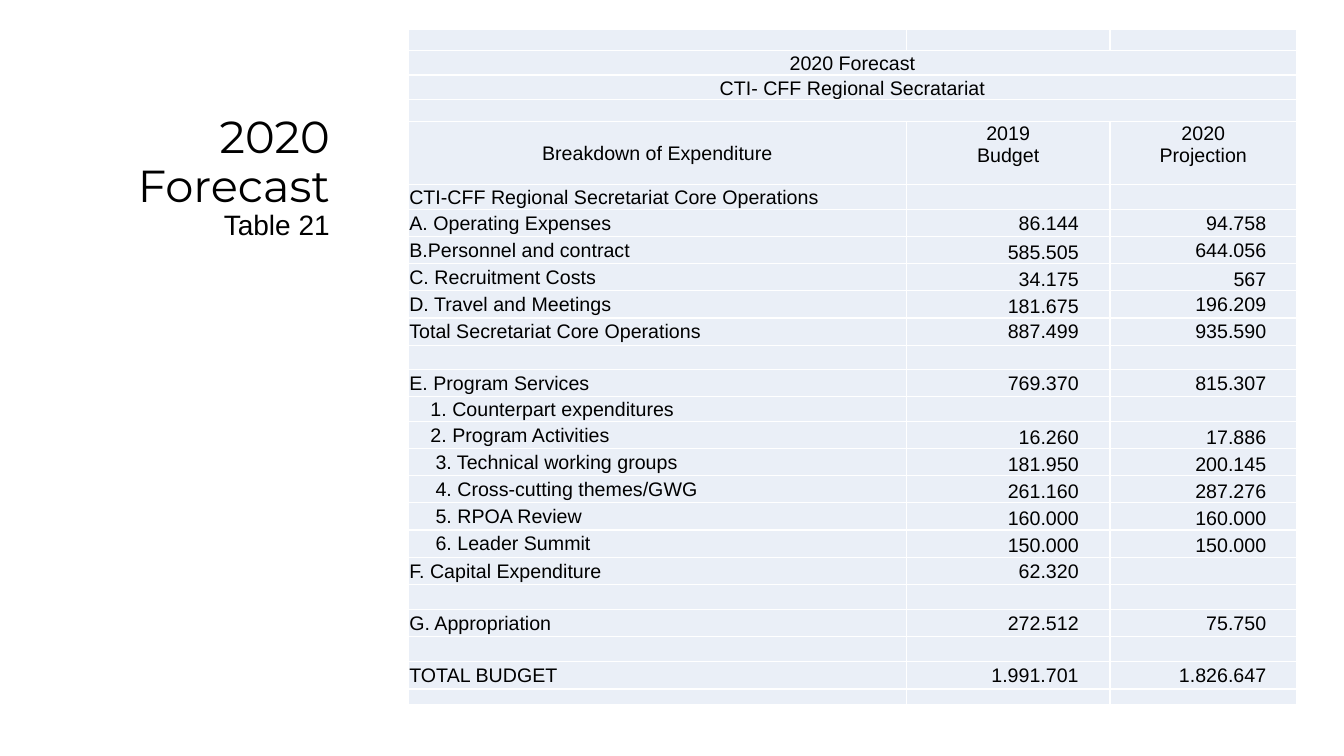
from lxml import etree
from pptx import Presentation
from pptx.dml.color import RGBColor
from pptx.enum.text import MSO_ANCHOR, PP_ALIGN
from pptx.oxml.ns import qn
from pptx.util import Inches, Pt

LEFT, CENTER, RIGHT = PP_ALIGN.LEFT, PP_ALIGN.CENTER, PP_ALIGN.RIGHT
TOP, MIDDLE, BOTTOM = MSO_ANCHOR.TOP, MSO_ANCHOR.MIDDLE, MSO_ANCHOR.BOTTOM

COLORS = {"text": "000000", "cell": "EAEFF7", "border": "FFFFFF"}
COLUMN_WIDTHS = (4.94, 2.02, 1.85)
AMOUNT_MARGINS = (0.31, 0.3)
EMPTY = ("", "", "")

# Each banner: row height, text across all columns
BANNERS = [
    (0.22, "2020 Forecast"),
    (0.22, "CTI- CFF Regional Secratariat"),
    (0.22, ""),
]
HEADER_HEIGHT = 0.62
HEADER = (
    ("Breakdown of Expenditure", MIDDLE),
    ("2019\vBudget", TOP),
    ("2020\vProjection", TOP),
)
# Each row: height, label indent, (label, 2019, 2020), anchors of the two amounts
EXPENDITURE = [
    (0.25, 0, ("CTI-CFF Regional Secretariat Core Operations", "", ""), (MIDDLE, MIDDLE)),
    (0.27, 0, ("A. Operating Expenses", "86.144", "94.758"), (MIDDLE, MIDDLE)),
    (0.27, 0, ("B.Personnel and contract", "585.505", "644.056"), (BOTTOM, MIDDLE)),
    (0.27, 0, ("C. Recruitment Costs", "34.175", "567"), (BOTTOM, BOTTOM)),
    (0.27, 0, ("D. Travel and Meetings", "181.675", "196.209"), (BOTTOM, MIDDLE)),
    (0.27, 0, ("Total Secretariat Core Operations", "887.499", "935.590"), (MIDDLE, MIDDLE)),
    (0.24, 0, EMPTY, (MIDDLE, MIDDLE)),
    (0.27, 0, ("E. Program Services", "769.370", "815.307"), (MIDDLE, MIDDLE)),
    (0.23, 0.21, ("1. Counterpart expenditures", "", ""), (MIDDLE, MIDDLE)),
    (0.27, 0.21, ("2. Program Activities", "16.260", "17.886"), (BOTTOM, BOTTOM)),
    (0.27, 0.26, ("3. Technical working groups", "181.950", "200.145"), (BOTTOM, BOTTOM)),
    (0.27, 0.26, ("4. Cross-cutting themes/GWG", "261.160", "287.276"), (BOTTOM, BOTTOM)),
    (0.27, 0.26, ("5. RPOA Review", "160.000", "160.000"), (BOTTOM, BOTTOM)),
    (0.27, 0.26, ("6. Leader Summit", "150.000", "150.000"), (BOTTOM, BOTTOM)),
    (0.27, 0, ("F. Capital Expenditure", "62.320", ""), (MIDDLE, MIDDLE)),
    (0.25, 0, EMPTY, (MIDDLE, MIDDLE)),
    (0.27, 0, ("G. Appropriation", "272.512", "75.750"), (MIDDLE, MIDDLE)),
    (0.25, 0, EMPTY, (MIDDLE, MIDDLE)),
    (0.27, 0, ("TOTAL BUDGET", "1.991.701", "1.826.647"), (MIDDLE, MIDDLE)),
    (0.15, 0, EMPTY, (MIDDLE, MIDDLE)),
]


def add_run(paragraph, text, size, font_name="Arial"):
    run = paragraph.add_run()
    run.text = text
    run.font.size = Pt(size)
    run.font.name = font_name
    run.font.color.rgb = RGBColor.from_string(COLORS["text"])


def add_title(slide, left, top, width, height):
    frame = slide.shapes.add_textbox(
        Inches(left), Inches(top), Inches(width), Inches(height)).text_frame
    frame.word_wrap = True
    frame.vertical_anchor = BOTTOM
    heading = frame.paragraphs[0]
    heading.alignment = RIGHT
    heading.line_spacing = 0.9
    add_run(heading, "2020 Forecast", 32, "Montserrat")
    heading.add_line_break()
    add_run(heading, "Table 21", 20)


def style_cell(cell):
    """Give the cell its borders, fill and tight margins."""
    properties = cell._tc.get_or_add_tcPr()
    for side in ("a:lnL", "a:lnR", "a:lnT", "a:lnB"):
        line = etree.SubElement(properties, qn(side), w=str(Pt(1)))
        fill = etree.SubElement(line, qn("a:solidFill"))
        etree.SubElement(fill, qn("a:srgbClr"), val=COLORS["border"])
    cell.fill.solid()
    cell.fill.fore_color.rgb = RGBColor.from_string(COLORS["cell"])
    margins = {"margin_left": 0.01, "margin_right": 0.01, "margin_top": 0.01, "margin_bottom": 0}
    for name, value in margins.items():
        setattr(cell, name, Inches(value))


def write_cell(cell, text, alignment, anchor):
    """Write the text; an empty cell gets a small font so its row stays low."""
    paragraph = cell.text_frame.paragraphs[0]
    if not text:
        etree.SubElement(paragraph._p, qn("a:endParaRPr"), sz="600")
        return
    paragraph.alignment = alignment
    cell.vertical_anchor = anchor
    for number, line in enumerate(text.split("\v")):
        if number:
            paragraph.add_line_break()
        add_run(paragraph, line, 14)


def add_budget_table(slide, left, top):
    heights = [0.21, *(height for height, _ in BANNERS), HEADER_HEIGHT,
               *(row[0] for row in EXPENDITURE)]
    table = slide.shapes.add_table(
        len(heights), len(COLUMN_WIDTHS), Inches(left), Inches(top),
        Inches(sum(COLUMN_WIDTHS)), Inches(sum(heights))).table
    table.first_row = table.horz_banding = False
    for column, width in zip(table.columns, COLUMN_WIDTHS):
        column.width = Inches(width)
    for row, height in zip(table.rows, heights):
        row.height = Inches(height)
    for cell in table.iter_cells():
        style_cell(cell)

    for column, text in enumerate(EMPTY):
        write_cell(table.cell(0, column), text, LEFT, MIDDLE)
    for row, (_, text) in enumerate(BANNERS, 1):
        banner = table.cell(row, 0)
        banner.merge(table.cell(row, 2))
        write_cell(banner, text, CENTER, BOTTOM)
        for column in (1, 2):
            write_cell(table.cell(row, column), "", LEFT, MIDDLE)
    header_row = len(BANNERS) + 1
    for column, (text, anchor) in enumerate(HEADER):
        write_cell(table.cell(header_row, column), text, CENTER, anchor)

    for row, (_, indent, (label, *amounts), anchors) in enumerate(EXPENDITURE, header_row + 1):
        label_cell = table.cell(row, 0)
        label_cell.margin_left = Inches(0.01 + indent)
        write_cell(label_cell, label, LEFT, MIDDLE)
        for column, (amount, anchor, margin) in enumerate(zip(amounts, anchors, AMOUNT_MARGINS), 1):
            amount_cell = table.cell(row, column)
            amount_cell.margin_right = Inches(margin)
            write_cell(amount_cell, amount, RIGHT, anchor)


def main():
    presentation = Presentation()
    presentation.slide_width = Inches(13.33)
    presentation.slide_height = Inches(7.5)
    slide = presentation.slides.add_slide(presentation.slide_layouts[6])
    add_title(slide, 0.92, 0.5, 2.45, 1.95)
    add_budget_table(slide, 4.05, 0.29)
    presentation.save("out.pptx")


if __name__ == "__main__":
    main()
